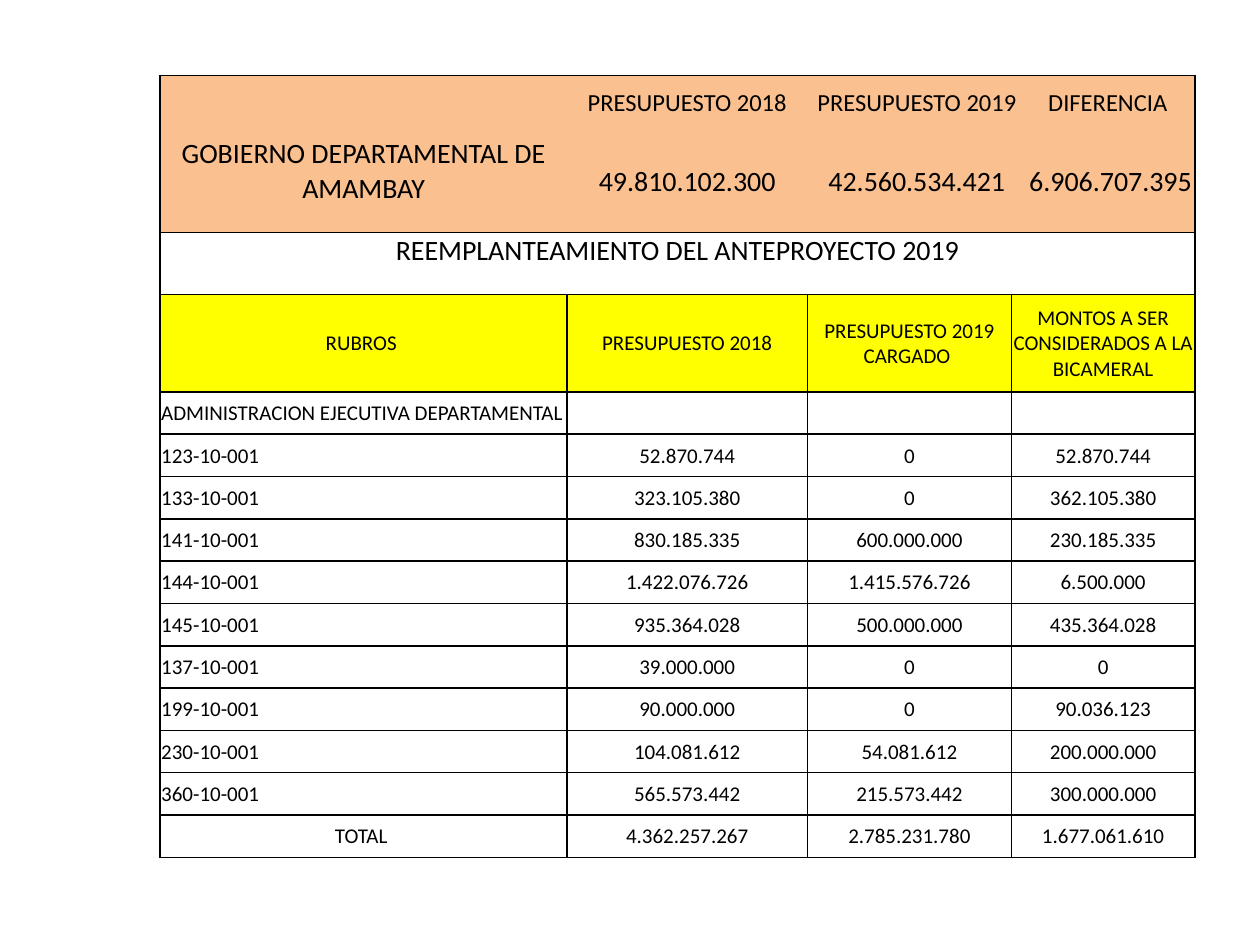
import pptx
import pptx.util
import pptx.dml.color
import pptx.enum.text
import pptx.oxml.ns
import lxml.etree

Cm = pptx.util.Cm
PEACH, YELLOW, BLACK = "FAC090", "FFFF00", "000000"
COLUMN_WIDTHS = [8.2, 4.85, 4.11, 0.3, 3.4]
ROW_HEIGHTS = [1.09, 2.06, 1.25, 1.96] + [0.853] * 11
ALL_SIDES = "LRTB"

HEADINGS = ["RUBROS ", "PRESUPUESTO 2018", "PRESUPUESTO 2019 CARGADO ",
            "MONTOS A SER CONSIDERADOS A LA BICAMERAL"]
ITEMS = [
    ["ADMINISTRACION EJECUTIVA DEPARTAMENTAL", "", "", ""],
    ["123-10-001", "52.870.744", "0", "52.870.744"],
    ["133-10-001", "323.105.380", "0", "362.105.380"],
    ["141-10-001", "830.185.335", "600.000.000", "230.185.335"],
    ["144-10-001", "1.422.076.726", "1.415.576.726", "6.500.000"],
    ["145-10-001", "935.364.028", "500.000.000", "435.364.028"],
    ["137-10-001", "39.000.000", "0", "0"],
    ["199-10-001", "90.000.000", "0", "90.036.123"],
    ["230-10-001", "104.081.612", "54.081.612", "200.000.000"],
    ["360-10-001", "565.573.442", "215.573.442", "300.000.000"],
    ["TOTAL ", "4.362.257.267", "2.785.231.780", "1.677.061.610"],
]


def color(value):
    return pptx.dml.color.RGBColor.from_string(value)


def set_borders(cell, sides):
    """Draw the named sides in black and hide the others."""
    properties = cell._tc.get_or_add_tcPr()
    for side in ALL_SIDES:
        line = lxml.etree.SubElement(properties, pptx.oxml.ns.qn("a:ln" + side), w="12700")
        if side in sides:
            fill = lxml.etree.SubElement(line, pptx.oxml.ns.qn("a:solidFill"))
            lxml.etree.SubElement(fill, pptx.oxml.ns.qn("a:srgbClr"), val=BLACK)
        else:
            lxml.etree.SubElement(line, pptx.oxml.ns.qn("a:noFill"))


def style_cell(cell, fill=None, sides=ALL_SIDES):
    set_borders(cell, sides)
    if fill:
        cell.fill.solid()
        cell.fill.fore_color.rgb = color(fill)
    else:
        cell.fill.background()
    cell.margin_left = cell.margin_right = cell.margin_top = Cm(0.02)
    cell.margin_bottom = 0
    cell.vertical_anchor = pptx.enum.text.MSO_ANCHOR.MIDDLE


def write(cell, text, size=12, centered=True):
    paragraph = cell.text_frame.paragraphs[0]
    if centered:
        paragraph.alignment = pptx.enum.text.PP_ALIGN.CENTER
    if text:
        run = paragraph.add_run()
        run.text = text
        run.font.name = "Calibri"
        run.font.size = pptx.util.Pt(size)
        run.font.color.rgb = color(BLACK)


def fill_summary(table):
    """Peach block with the department and its two budgets."""
    for row, sides in enumerate(["T", "B"]):
        for column in range(5):
            edge = {0: "L", 4: "R"}.get(column, "")
            style_cell(table.cell(row, column), PEACH, "LTB" if column == 0 else sides + edge)
        table.cell(row, 2).merge(table.cell(row, 3))
    department = table.cell(0, 0)
    department.merge(table.cell(1, 0))
    department.margin_top = Cm(0.7)
    write(department, "GOBIERNO DEPARTAMENTAL DE AMAMBAY", size=16)
    summary = {1: ("PRESUPUESTO 2018", "49.810.102.300"),
               2: ("PRESUPUESTO 2019", "42.560.534.421"),
               4: ("DIFERENCIA ", "6.906.707.395")}
    for column, (label, amount) in summary.items():
        write(table.cell(0, column), label, size=14)
        write(table.cell(1, column), amount, size=16)


def fill_title(table):
    for column in range(5):
        style_cell(table.cell(2, column))
    title = table.cell(2, 0)
    title.merge(table.cell(2, 4))
    title.vertical_anchor = pptx.enum.text.MSO_ANCHOR.TOP
    write(title, "REEMPLANTEAMIENTO DEL ANTEPROYECTO 2019", size=16)


def fill_items(table):
    """Yellow headings, then one row for each budget item."""
    for row, values in enumerate([HEADINGS] + ITEMS, start=3):
        for column in range(5):
            style_cell(table.cell(row, column), YELLOW if values is HEADINGS else None)
        table.cell(row, 3).merge(table.cell(row, 4))
        for column, value in enumerate(values):
            is_code = column == 0 and values not in (HEADINGS, ITEMS[-1])
            write(table.cell(row, column), value, centered=not is_code)


def add_budget_table(slide, left, top):
    frame = slide.shapes.add_table(len(ROW_HEIGHTS), len(COLUMN_WIDTHS), Cm(left), Cm(top),
                                   Cm(sum(COLUMN_WIDTHS)), Cm(sum(ROW_HEIGHTS)))
    table = frame.table
    table.first_row = table.horz_banding = False
    for column, width in zip(table.columns, COLUMN_WIDTHS):
        column.width = Cm(width)
    for row, height in zip(table.rows, ROW_HEIGHTS):
        row.height = Cm(height)
    fill_summary(table)
    fill_title(table)
    fill_items(table)


def main():
    presentation = pptx.Presentation()
    presentation.slide_width, presentation.slide_height = Cm(25.4), Cm(19.05)
    slide = presentation.slides.add_slide(presentation.slide_layouts[6])
    add_budget_table(slide, left=3.23, top=1.52)
    presentation.save("out.pptx")


if __name__ == "__main__":
    main()
